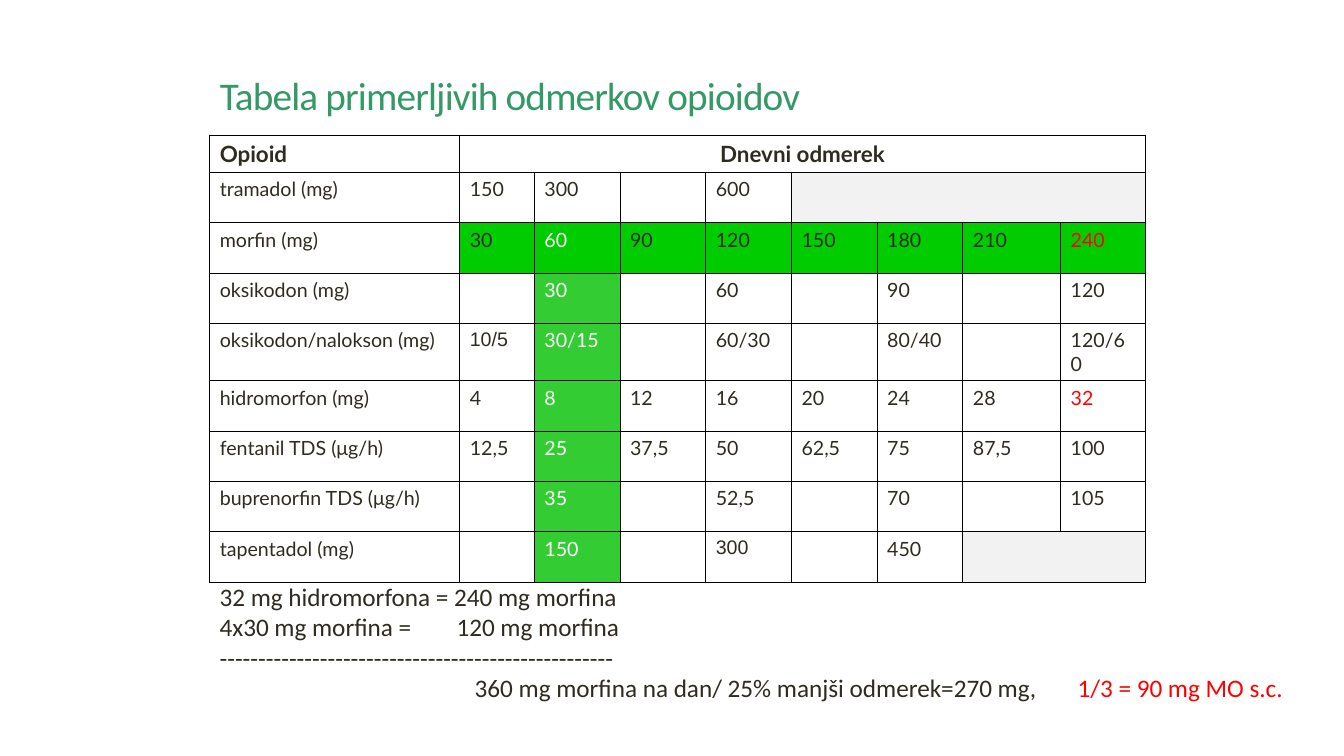
from lxml import etree
from pptx import Presentation
from pptx import util as u
from pptx.dml.color import RGBColor
from pptx.enum import text
from pptx.oxml import ns

COLUMN_WIDTHS = [2.48, 0.74] + [0.85] * 5 + [0.97, 0.84]
ROW_HEIGHTS = [0.37] + [0.5] * 3 + [0.53] + [0.5] * 4
DOSES = [
    ["Opioid", "Dnevni odmerek", "", "", "", "", "", "", ""],
    ["tramadol (mg)", "150", "300", "", "600", "", "", "", ""],
    ["morfin (mg)", "30", "60", "90", "120", "150", "180", "210", "240"],
    ["oksikodon (mg)", "", "30", "", "60", "", "90", "", "120"],
    ["oksikodon/nalokson (mg)", "10/5", "30/15", "", "60/30", "", "80/40", "", "120/60"],
    ["hidromorfon (mg)", "4", "8", "12", "16", "20", "24", "28", "32"],
    ["fentanil TDS (μg/h)", "12,5", "25", "37,5", "50", "62,5", "75", "87,5", "100"],
    ["buprenorfin TDS (μg/h)", "", "35", "", "52,5", "", "70", "", "105"],
    ["tapentadol (mg)", "", "150", "", "300", "", "450", "", ""],
]
MERGES = [(0, 1), (1, 5), (8, 7)]
UNAVAILABLE = MERGES[1:]
RED_DOSES = [(2, 8), (5, 8)]
ARIAL_DOSES = [(4, 1), (8, 4)]
UNINDENTED = ARIAL_DOSES + [(4, 8)]
MORPHINE_ROW, HEADER_ROW, REFERENCE_COLUMN = 2, 0, 2


def color(value):
    return RGBColor.from_string(value)


class DoseSlide:
    """Holds the style and the current slide, and adds each kind of element."""

    ink, red, white = "2F2B20", "FF0000", "FFFFFF"
    heading, grey = "339966", "F2F2F2"
    morphine_green, reference_green = "00CC00", "33CC33"

    def __init__(self, presentation):
        self.slide = presentation.slides.add_slide(presentation.slide_layouts[5])

    def set_font(self, font, name, size, ink, bold=False):
        font.name, font.size, font.bold = name, u.Pt(size), bold
        font.color.rgb = color(ink)

    def add_title(self, wording, left, top, width, height):
        title = self.slide.shapes.title
        title.left, title.top = u.Inches(left), u.Inches(top)
        title.width, title.height = u.Inches(width), u.Inches(height)
        frame = title.text_frame
        frame.text = wording
        frame.vertical_anchor = text.MSO_ANCHOR.MIDDLE
        paragraph = frame.paragraphs[0]
        paragraph.alignment = text.PP_ALIGN.LEFT
        paragraph.line_spacing = 0.9
        self.set_font(paragraph.font, "Calibri", 28, self.heading)
        paragraph.runs[0]._r.get_or_add_rPr().set("spc", "-60")

    def add_borders(self, cell):
        properties = cell._tc.get_or_add_tcPr()
        for side in ("lnL", "lnR", "lnT", "lnB"):
            line = etree.SubElement(properties, ns.qn(f"a:{side}"), w=str(u.Pt(0.75)))
            fill = etree.SubElement(line, ns.qn("a:solidFill"))
            etree.SubElement(fill, ns.qn("a:srgbClr"), val="000000")

    def cell_colors(self, row, column):
        fill, ink = None, self.ink
        if (row, column) in UNAVAILABLE:
            fill = self.grey
        elif row == MORPHINE_ROW and column > 0:
            fill = self.morphine_green
        elif row > MORPHINE_ROW and column == REFERENCE_COLUMN:
            fill = self.reference_green
        if row >= MORPHINE_ROW and column == REFERENCE_COLUMN:
            ink = self.white
        elif (row, column) in RED_DOSES:
            ink = self.red
        return fill, ink

    def format_cell(self, cell, wording, row, column):
        fill, ink = self.cell_colors(row, column)
        self.add_borders(cell)
        if fill:
            cell.fill.solid()
            cell.fill.fore_color.rgb = color(fill)
        else:
            cell.fill.background()
        cell.text = wording
        paragraph = cell.text_frame.paragraphs[0]
        header = row == HEADER_ROW
        name = "Arial" if (row, column) in ARIAL_DOSES else "Lato"
        self.set_font(paragraph.font, name, 16 if header else 14, ink, header)
        if header and column > 0:
            paragraph.alignment = text.PP_ALIGN.CENTER
        if wording and (row, column) not in UNINDENTED:
            hanging = u.Inches(0.38)
            properties = paragraph._p.get_or_add_pPr()
            properties.set("marL", str(hanging))
            properties.set("indent", str(-hanging))

    def add_dose_table(self, left, top):
        table = self.slide.shapes.add_table(
            len(DOSES), len(COLUMN_WIDTHS), u.Inches(left), u.Inches(top),
            u.Inches(sum(COLUMN_WIDTHS)), u.Inches(sum(ROW_HEIGHTS))).table
        table.first_row = table.horz_banding = False
        for column, width in zip(table.columns, COLUMN_WIDTHS):
            column.width = u.Inches(width)
        for row, height in zip(table.rows, ROW_HEIGHTS):
            row.height = u.Inches(height)
        for row, doses in enumerate(DOSES):
            for column, wording in enumerate(doses):
                self.format_cell(table.cell(row, column), wording, row, column)
        for row, column in MERGES:
            table.cell(row, column).merge(table.cell(row, len(COLUMN_WIDTHS) - 1))

    def add_calculation(self, lines, left, top, width, height):
        box = self.slide.shapes.add_textbox(
            u.Inches(left), u.Inches(top), u.Inches(width), u.Inches(height))
        frame = box.text_frame
        frame.word_wrap = True
        frame.auto_size = text.MSO_AUTO_SIZE.SHAPE_TO_FIT_TEXT
        for index, (parts, stops) in enumerate(lines):
            paragraph = frame.paragraphs[0] if index == 0 else frame.add_paragraph()
            self.set_font(paragraph.font, "Calibri", 18, self.ink)
            if stops:
                tabs = etree.Element(ns.qn("a:tabLst"))
                for stop in stops:
                    etree.SubElement(tabs, ns.qn("a:tab"), pos=str(u.Inches(stop)), algn="l")
                paragraph._p.get_or_add_pPr().insert(0, tabs)
            for wording, ink in parts:
                run = paragraph.add_run()
                run.text = wording
                self.set_font(run.font, "Calibri", 18, ink)


def main():
    presentation = Presentation()
    presentation.slide_width = u.Inches(13.33)
    presentation.slide_height = u.Inches(7.5)
    slide = DoseSlide(presentation)
    slide.add_title("Tabela primerljivih odmerkov opioidov", 2.08, 0.35, 9, 1.25)
    slide.add_dose_table(2.08, 1.34)
    slide.add_calculation([
        ([("32 mg hidromorfona = 240 mg morfina", slide.ink)], []),
        ([("4x30 mg morfina =\t120 mg morfina", slide.ink)], [2.35]),
        ([("-" * 51, slide.ink)], []),
        ([("\t360 mg morfina na dan/ 25% manjši odmerek=270 mg,\t", slide.ink),
          ("1/3 = 90 mg MO s.c.", slide.red)], [2.53, 8.51]),
    ], 2.08, 5.72, 11, 1.31)
    presentation.save("out.pptx")


if __name__ == "__main__":
    main()
